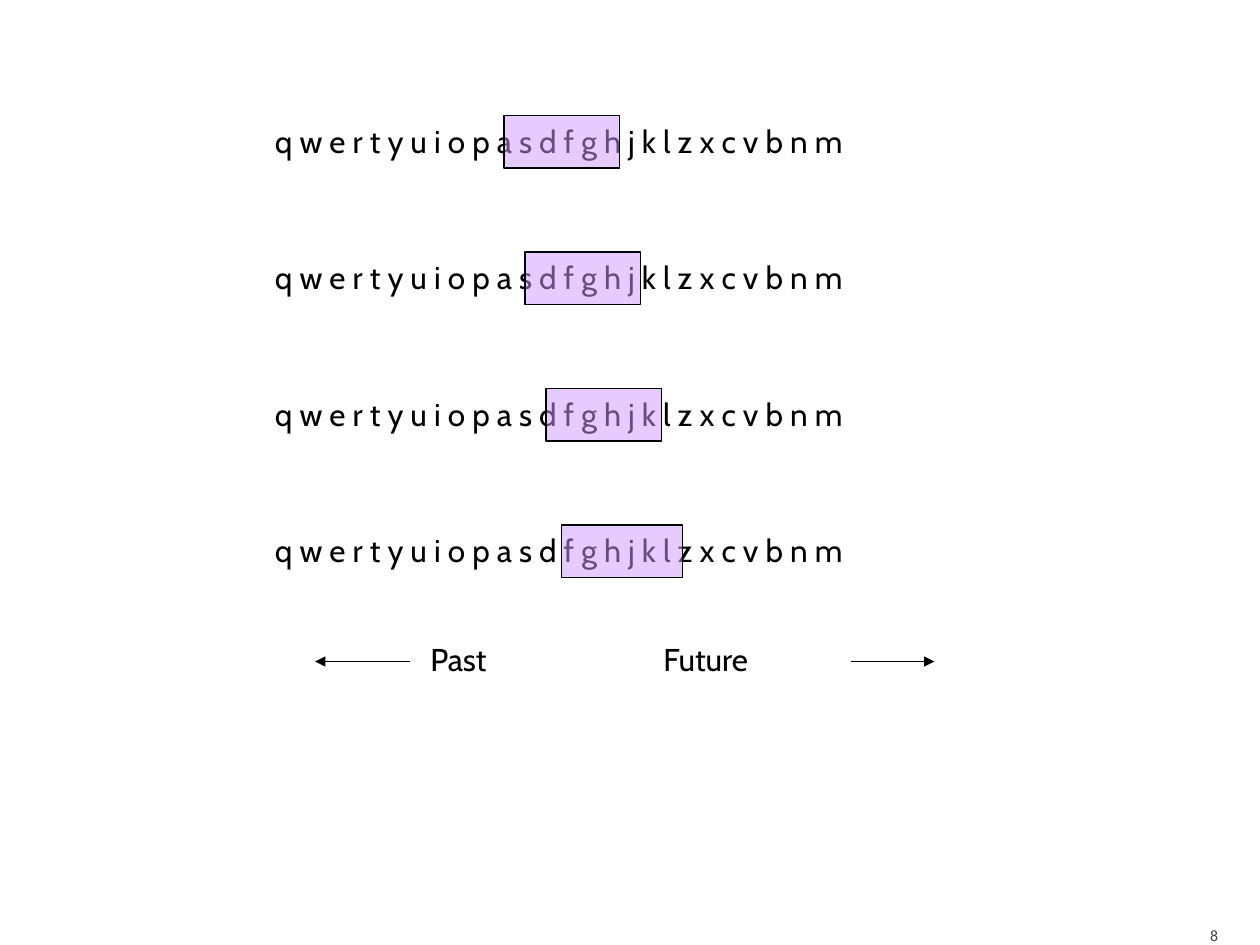
from lxml import etree
from pptx import Presentation
from pptx.dml.color import RGBColor
from pptx.enum.shapes import MSO_CONNECTOR, MSO_SHAPE
from pptx.enum.text import MSO_ANCHOR, PP_ALIGN
from pptx.oxml.ns import qn
from pptx.util import Inches, Pt

RECTANGLE = MSO_SHAPE.RECTANGLE
STRAIGHT = MSO_CONNECTOR.STRAIGHT
TOP, BOTTOM = MSO_ANCHOR.TOP, MSO_ANCHOR.BOTTOM
LEFT, RIGHT = PP_ALIGN.LEFT, PP_ALIGN.RIGHT

CELLS_PER_INCH = 12
LETTERS = " ".join("qwertyuiopasdfghjklzxcvbnm")
WINDOWS = [(23, 11), (25, 11), (27, 11), (28.5, 11.5)]
ROW_PITCH = 13


def cells(count):
    return Inches(count / CELLS_PER_INCH)


def color(hex_value):
    return RGBColor.from_string(hex_value)


def add_text(shapes, box, text, font="Cabin", size=18, fill="000000",
             align=LEFT, anchor=TOP):
    shape = shapes.add_textbox(*map(cells, box))
    frame = shape.text_frame
    frame.word_wrap = True
    frame.vertical_anchor = anchor
    paragraph = frame.paragraphs[0]
    paragraph.text = text
    paragraph.alignment = align
    paragraph.font.name = font
    paragraph.font.size = Pt(size)
    paragraph.font.color.rgb = color(fill)
    return shape


def add_window(shapes, box):
    shape = shapes.add_shape(RECTANGLE, *map(cells, box))
    shape.shadow.inherit = False
    shape.fill.solid()
    shape.fill.fore_color.rgb = color("CC99FF")
    shape.line.color.rgb = color("000000")
    shape.line.width = Pt(0.75)
    fill_color = shape.fill._xPr.find(qn("a:solidFill"))[0]
    etree.SubElement(fill_color, qn("a:alpha"), val="50000")


def add_arrow(shapes, start, end, row):
    connector = shapes.add_connector(
        STRAIGHT, cells(start), cells(row), cells(end), cells(row))
    connector.line.color.rgb = color("000000")
    connector.line.width = Pt(0.75)
    etree.SubElement(connector.line._get_or_add_ln(), qn("a:tailEnd"), type="triangle")
    etree.SubElement(connector._element.spPr, qn("a:effectLst"))


def add_sequence(slide, box, window_offset, window_width):
    left, top, width, height = box
    group = slide.shapes.add_group_shape()
    add_text(group.shapes, box, LETTERS)
    add_window(group.shapes, (left + window_offset, top, window_width, height))


def add_time_axis(slide, box):
    left, top, width, height = box
    middle = top + height / 2
    add_text(slide.shapes, (left + 9.8, top, 10, height), "Past")
    add_text(slide.shapes, (left + 32, top, 12, height), "Future")
    add_arrow(slide.shapes, left + 9, left, middle)
    add_arrow(slide.shapes, left + width - 8, left + width, middle)


def add_slide_number(slide, box):
    shape = add_text(slide.shapes, box, "8", "Calibri", 9, "454545", RIGHT, BOTTOM)
    shape.text_frame.margin_bottom = 0


def main():
    presentation = Presentation()
    presentation.slide_width = Inches(10)
    presentation.slide_height = Inches(7.5)
    slide = presentation.slides.add_slide(presentation.slide_layouts[6])
    add_slide_number(slide, (107.6, 86.4, 9.6, 3.6))
    for index, (offset, width) in enumerate(WINDOWS):
        add_sequence(slide, (25, 11 + index * ROW_PITCH, 64, 5), offset, width)
    add_time_axis(slide, (30, 60.4, 59, 5.2))
    presentation.save("out.pptx")


if __name__ == "__main__":
    main()
